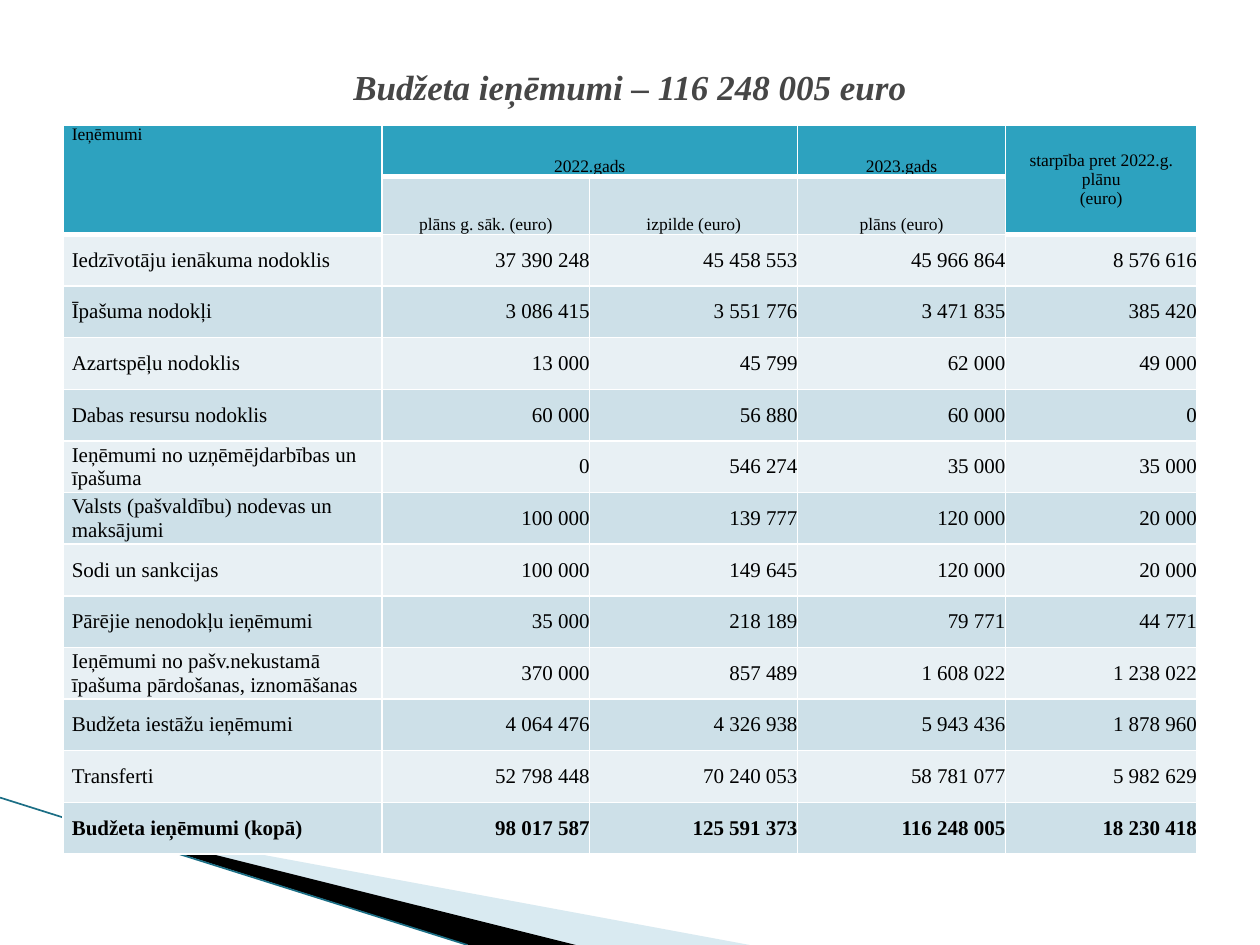
from lxml import etree
from pptx import Presentation
from pptx import util as u
from pptx.dml.color import RGBColor
from pptx.enum import shapes, text
from pptx.oxml import ns

FONT = "Times New Roman"
TEAL, BLUE, PALE = "2DA2BF", "CDE0E8", "E8F0F4"
LEFT, MID, RIGHT = text.PP_ALIGN.LEFT, text.PP_ALIGN.CENTER, text.PP_ALIGN.RIGHT
TOP, CENTER, BASE = text.MSO_ANCHOR.TOP, text.MSO_ANCHOR.MIDDLE, text.MSO_ANCHOR.BOTTOM

WIDTHS = [2.53, 1.65, 1.65, 1.65, 1.52]
# row, column, text, fill, anchor, alignment
HEADS = [
    (0, 0, "Ieņēmumi", TEAL, TOP, LEFT),
    (0, 1, "2022.gads", TEAL, BASE, MID),
    (0, 3, "2023.gads", TEAL, BASE, MID),
    (0, 4, "starpība pret 2022.g. plānu\n(euro)", TEAL, CENTER, MID),
    (1, 1, "plāns g. sāk. (euro)", BLUE, BASE, MID),
    (1, 2, "izpilde (euro)", BLUE, BASE, MID),
    (1, 3, "plāns (euro)", BLUE, BASE, MID),
]
ROWS = [
    ("Iedzīvotāju ienākuma nodoklis", "37 390 248", "45 458 553", "45 966 864", "8 576 616"),
    ("Īpašuma nodokļi", "3 086 415", "3 551 776", "3 471 835", "385 420"),
    ("Azartspēļu nodoklis", "13 000", "45 799", "62 000", "49 000"),
    ("Dabas resursu nodoklis", "60 000", "56 880", "60 000", "0"),
    ("Ieņēmumi no uzņēmējdarbības un īpašuma", "0", "546 274", "35 000", "35 000"),
    ("Valsts (pašvaldību) nodevas un maksājumi", "100 000", "139 777", "120 000", "20 000"),
    ("Sodi un sankcijas", "100 000", "149 645", "120 000", "20 000"),
    ("Pārējie nenodokļu ieņēmumi", "35 000", "218 189", "79 771", "44 771"),
    ("Ieņēmumi no pašv.nekustamā īpašuma pārdošanas, iznomāšanas",
     "370 000", "857 489", "1 608 022", "1 238 022"),
    ("Budžeta iestāžu ieņēmumi", "4 064 476", "4 326 938", "5 943 436", "1 878 960"),
    ("Transferti", "52 798 448", "70 240 053", "58 781 077", "5 982 629"),
    ("Budžeta ieņēmumi (kopā)", "98 017 587", "125 591 373", "116 248 005", "18 230 418"),
]


def color(code):
    return RGBColor.from_string(code)


class Deck:
    def __init__(self, slide, font):
        self.slide, self.font = slide, font

    def label(self, frame, words, size, align, ink="000000", bold=False, italic=False):
        frame.text = words
        frame.word_wrap = True
        for para in frame.paragraphs:
            para.alignment = align
            for run in para.runs:
                face = run.font
                face.name, face.size = self.font, u.Pt(size)
                face.bold, face.italic = bold, italic
                face.color.rgb = color(ink)

    def title(self, words, x, y, w, h):
        box = self.slide.shapes.add_textbox(*map(u.Inches, (x, y, w, h)))
        box.text_frame.vertical_anchor = CENTER
        self.label(box.text_frame, words, 20, MID, "464646", True, True)

    def wedge(self, points, fill, alpha=100):
        spots = [(u.Inches(x), u.Inches(y)) for x, y in points]
        form = self.slide.shapes.build_freeform(*spots[0])
        form.add_line_segments(spots[1:], close=True)
        shape = form.convert_to_shape()
        shape.shadow.inherit = False
        shape.line.fill.background()
        shape.fill.solid()
        shape.fill.fore_color.rgb = color(fill)
        if alpha < 100:
            tint = shape._element.spPr.find(".//" + ns.qn("a:srgbClr"))
            etree.SubElement(tint, ns.qn("a:alpha"), val=str(alpha * 1000))

    def line(self, x1, y1, x2, y2, ink, width):
        rule = self.slide.shapes.add_connector(
            shapes.MSO_CONNECTOR.STRAIGHT, *map(u.Inches, (x1, y1, x2, y2)))
        rule.line.color.rgb = color(ink)
        rule.line.width = u.Pt(width)
        etree.SubElement(rule._element.spPr, ns.qn("a:effectLst"))

    def grid(self, x, y, widths, high, count):
        table = self.slide.shapes.add_table(
            count, len(widths), u.Inches(x), u.Inches(y),
            u.Inches(sum(widths)), u.Inches(high * count)).table
        table.first_row = table.horz_banding = False
        for col, width in zip(table.columns, widths):
            col.width = u.Inches(width)
        for row in table.rows:
            row.height = u.Inches(high)
        return table

    def edge(self, cell, base):
        """Draw white borders, the bottom one base points wide."""
        props = cell._tc.get_or_add_tcPr()
        for side, width in zip("LRTB", (1, 1, 1, base)):
            rim = etree.SubElement(props, ns.qn("a:ln" + side), w=str(u.Pt(width)))
            fill = etree.SubElement(rim, ns.qn("a:solidFill"))
            etree.SubElement(fill, ns.qn("a:srgbClr"), val="FFFFFF")

    def cell(self, cell, words, fill, anchor, align, size, bold=False, pad=0.07, base=1):
        self.edge(cell, base)
        cell.fill.solid()
        cell.fill.fore_color.rgb = color(fill)
        cell.vertical_anchor = anchor
        cell.margin_left = cell.margin_right = u.Inches(pad)
        cell.margin_top = cell.margin_bottom = 0
        self.label(cell.text_frame, words, size, align, bold=bold)


def main():
    prs = Presentation()
    prs.slide_width, prs.slide_height = u.Inches(10), u.Inches(7.5)
    deck = Deck(prs.slides.add_slide(prs.slide_layouts[6]), FONT)

    deck.wedge([(0.55, 6.5), (5.95, 7.5), (4.56, 7.5)], "A0CBDC", 40)
    deck.wedge([(0.53, 6.49), (4.57, 7.5), (3.72, 7.5)], "000000")
    deck.line(0, 6.33, 3.71, 7.5, "1B6E85", 0.95)

    table = deck.grid(0.5, 0.99, WIDTHS, 0.41, len(ROWS) + 2)
    for start, end in (((0, 0), (1, 0)), ((0, 1), (0, 2)), ((0, 4), (1, 4))):
        table.cell(*start).merge(table.cell(*end))
    for row, col, words, fill, anchor, align in HEADS:
        deck.cell(table.cell(row, col), words, fill, anchor, align, 10,
                  base=1 if row else 3)
    for i, row in enumerate(ROWS):
        fill = BLUE if i % 2 else PALE
        last = i == len(ROWS) - 1
        for j, words in enumerate(row):
            deck.cell(table.cell(i + 2, j), words, fill, CENTER,
                      RIGHT if j else LEFT, 12, last, 0 if j else 0.07)

    deck.title("Budžeta ieņēmumi – 116 248 005 euro", 0.5, 0.3, 9, 0.77)
    prs.save("out.pptx")


if __name__ == "__main__":
    main()
